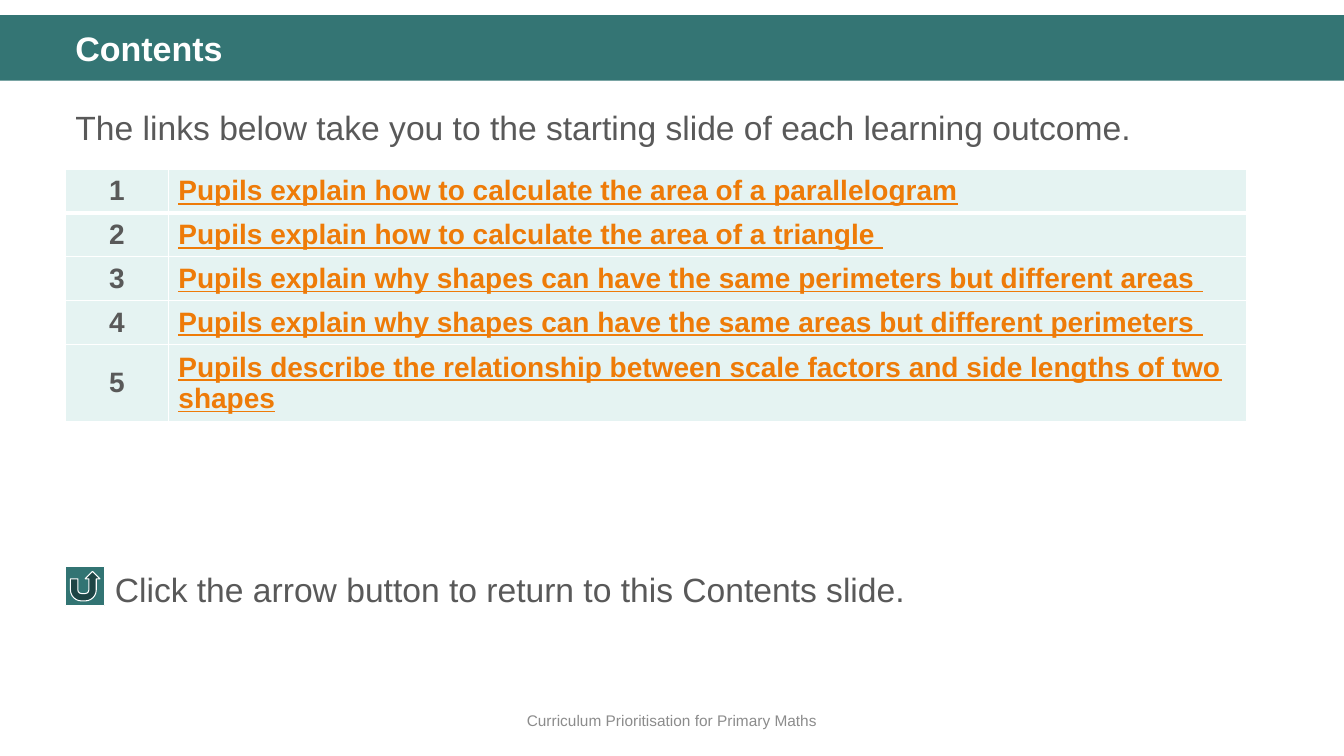
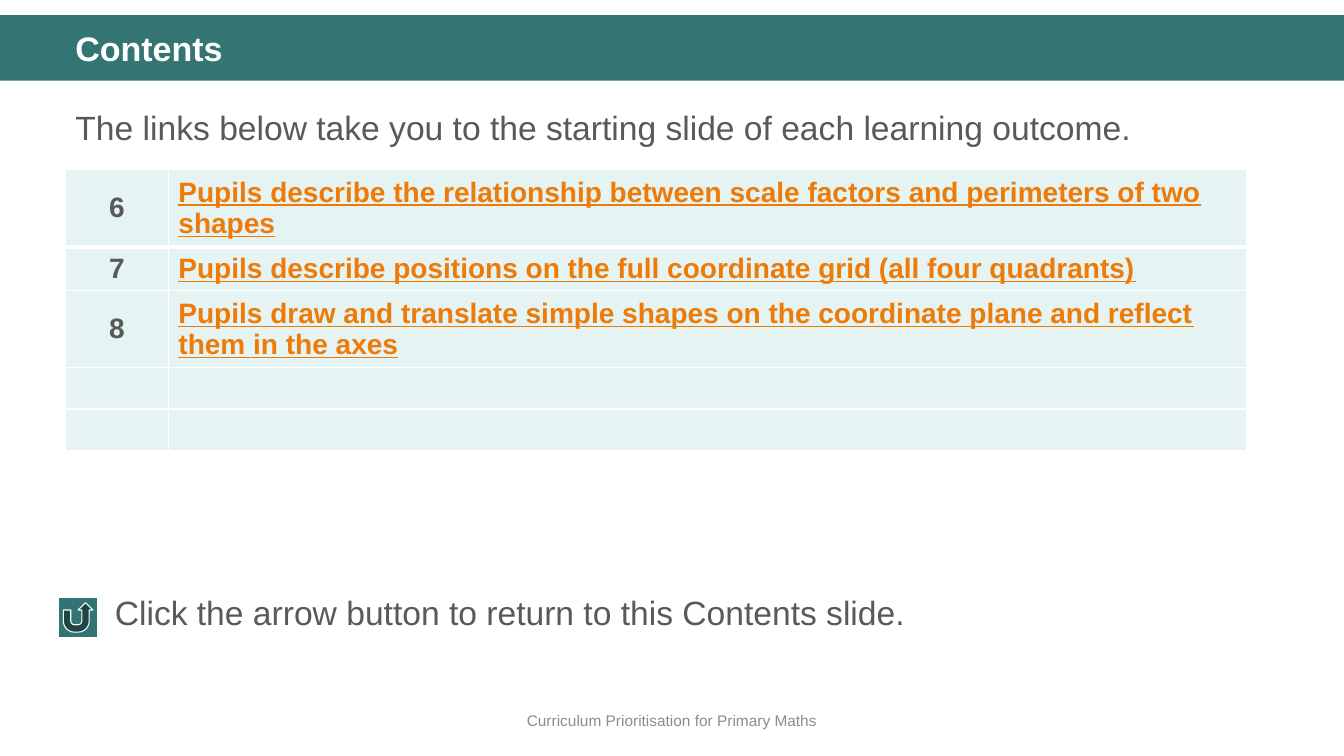
"""Build two contents slides for a primary maths deck."""
from lxml.etree import SubElement
from pptx import Presentation
from pptx.dml.color import RGBColor as RGB
from pptx.enum.shapes import MSO_SHAPE as Shape
from pptx.enum.text import MSO_ANCHOR as Anchor, PP_ALIGN as Align
from pptx.oxml.ns import qn
from pptx.util import Inches, Pt

WHITE = RGB(0xFF, 0xFF, 0xFF)
TEAL = RGB(0x34, 0x75, 0x74)
BUTTON = RGB(0x32, 0x74, 0x73)
PALE = RGB(0xE5, 0xF3, 0xF2)
ORANGE = RGB(0xEE, 0x7B, 0x08)
DARK = RGB(0x59, 0x59, 0x59)
GREY = RGB(0x8C, 0x8C, 0x8C)
FONT = "Arial"
WIDTH, LEFT, SPAN = 13.33, 0.65, 12.18
COLS = (1.02, 10.69)
SINGLE, DOUBLE, WRAP = 0.41, 0.71, 80

PAGES = [
    {"rows": [
        ("1", "Pupils explain how to calculate the area of a parallelogram"),
        ("2", "Pupils explain how to calculate the area of a triangle "),
        ("3", "Pupils explain why shapes can have the same perimeters but different areas "),
        ("4", "Pupils explain why shapes can have the same areas but different perimeters "),
        ("5", "Pupils describe the relationship between scale factors and side lengths of two shapes"),
    ], "button": (0.65, 5.62), "hint": 5.59},
    {"rows": [
        ("6", "Pupils describe the relationship between scale factors and perimeters of two shapes"),
        ("7", "Pupils describe positions on the full coordinate grid (all four quadrants)"),
        ("8", "Pupils draw and translate simple shapes on the coordinate plane and reflect them in the axes"),
        ("", ""),
        ("", ""),
    ], "button": (0.58, 5.93), "hint": 5.82},
]


def style(para, size, color, bold=False, line=False):
    """Format every run of a paragraph."""
    for run in para.runs:
        font = run.font
        font.name, font.size, font.bold = FONT, Pt(size), bold
        font.underline = line
        font.color.rgb = color


def add_text(slide, box, text, size, color, bold=False, align=Align.LEFT,
             anchor=Anchor.TOP, spacing=1.0):
    """Add a wrapped one-paragraph text box."""
    frame = slide.shapes.add_textbox(*map(Inches, box)).text_frame
    frame.word_wrap = True
    frame.vertical_anchor = anchor
    frame.text = text
    para = frame.paragraphs[0]
    para.alignment, para.line_spacing = align, spacing
    style(para, size, color, bold)


def add_block(slide, kind, box, fill):
    """Add a flat filled shape without a line."""
    block = slide.shapes.add_shape(kind, *map(Inches, box))
    block.shadow.inherit = False
    block.fill.solid()
    block.fill.fore_color.rgb = fill
    block.line.fill.background()
    return block


def add_frame(slide):
    """Add the title band, title and footer."""
    add_block(slide, Shape.RECTANGLE, (0, 0.15, WIDTH, 0.65), TEAL)
    add_text(slide, (LEFT, 0.27, SPAN, 0.47), "Contents", 24.3, WHITE,
             bold=True, spacing=0.9)
    add_text(slide, (0, 6.95, WIDTH, 0.4),
             "Curriculum Prioritisation for Primary Maths", 11, GREY,
             align=Align.CENTER, anchor=Anchor.MIDDLE)


def set_edges(cell, top, bottom):
    """Draw white borders round a cell, with widths in points."""
    props = cell._tc.get_or_add_tcPr()
    edges = (("L", 1), ("R", 1), ("T", top), ("B", bottom))
    for spot, (side, width) in enumerate(edges):
        edge = SubElement(props, qn(f"a:ln{side}"), w=str(Pt(width)))
        fill = SubElement(edge, qn("a:solidFill"))
        SubElement(fill, qn("a:srgbClr"), val=str(WHITE))
        props.insert(spot, edge)


def add_list(slide, left, top, rows):
    """Add the table of numbered learning outcomes."""
    tall = [DOUBLE if len(text) > WRAP else SINGLE for _, text in rows]
    box = (left, top, sum(COLS), sum(tall))
    table = slide.shapes.add_table(len(rows), len(COLS), *map(Inches, box)).table
    table.first_row = table.horz_banding = False
    for col, width in zip(table.columns, COLS):
        col.width = Inches(width)
    for i, (row, high, texts) in enumerate(zip(table.rows, tall, rows)):
        row.height = Inches(high)
        for j, (cell, text) in enumerate(zip(row.cells, texts)):
            cell.fill.solid()
            cell.fill.fore_color.rgb = PALE
            set_edges(cell, 3 if i == 1 else 1, 3 if i == 0 else 1)
            cell.vertical_anchor = Anchor.MIDDLE
            if text:
                cell.text_frame.text = text
                para = cell.text_frame.paragraphs[0]
                para.alignment = Align.LEFT if j else Align.CENTER
                style(para, 20, ORANGE if j else DARK, True, bool(j))


def add_hint(slide, spot, top):
    """Add the return button and its explanation."""
    button = add_block(slide, Shape.ACTION_BUTTON_RETURN, (*spot, 0.39, 0.39), BUTTON)
    button.line.color.rgb = WHITE
    button.line.width = Pt(0.75)
    add_text(slide, (1.04, top, 11.32, 0.5),
             "Click the arrow button to return to this Contents slide.", 24, DARK)


def add_page(deck, page):
    """Add one contents slide."""
    slide = deck.slides.add_slide(deck.slide_layouts[6])
    add_frame(slide)
    add_text(slide, (LEFT, 0.93, SPAN, 0.65),
             "The links below take you to the starting slide of each learning outcome.",
             24, DARK, spacing=1.2)
    add_list(slide, LEFT, 1.68, page["rows"])
    add_hint(slide, page["button"], page["hint"])


def main():
    """Build and save the deck."""
    deck = Presentation()
    deck.slide_width, deck.slide_height = Inches(WIDTH), Inches(7.5)
    for page in PAGES:
        add_page(deck, page)
    deck.save("out.pptx")


if __name__ == "__main__":
    main()
